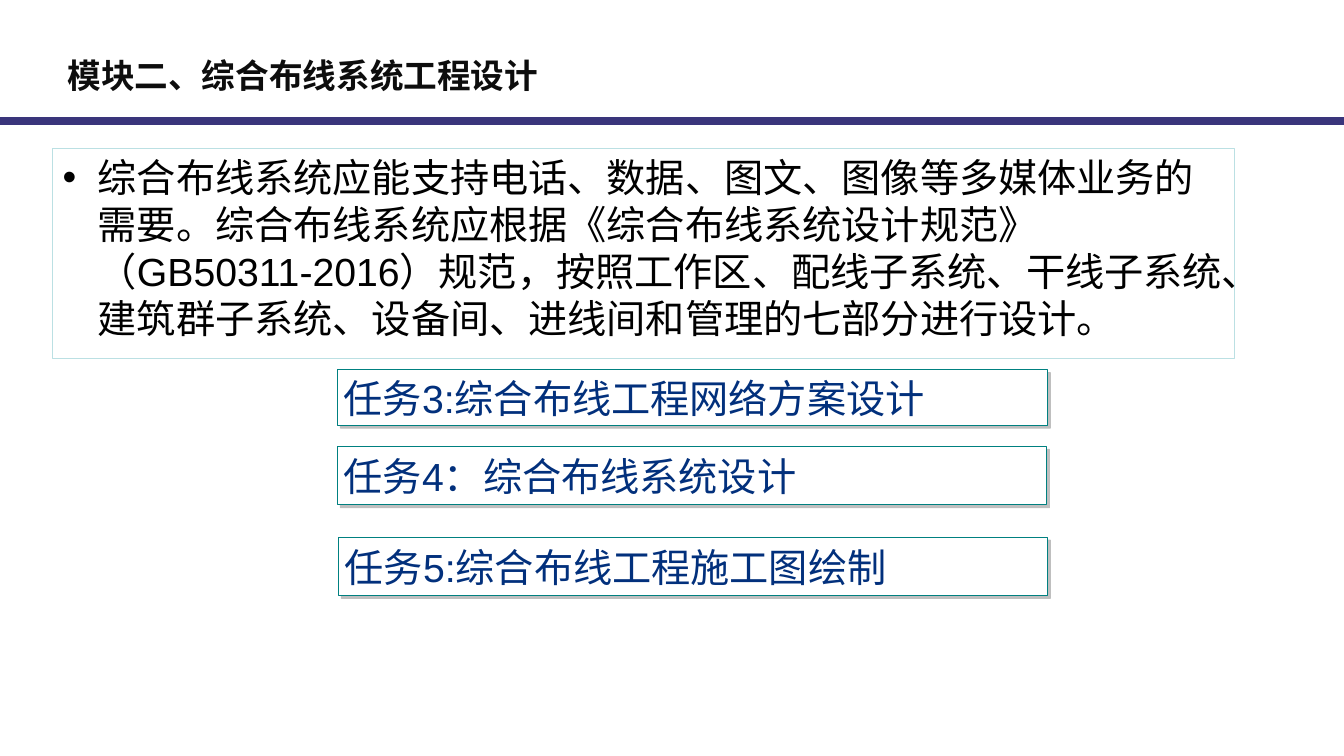
"""Build the slide that introduces module two and its three design tasks."""
from dataclasses import dataclass
from typing import Any

from lxml import etree
from pptx import Presentation
from pptx import util as u
from pptx.dml.color import RGBColor
from pptx.enum import shapes, text
from pptx.oxml import ns


@dataclass(frozen=True)
class Theme:
    """Colours, font and type sizes of the slide."""
    face: str = "Arial"
    head: int = 24
    body: int = 28
    dark: str = "0D0D0D"
    ink: str = "000000"
    navy: str = "02307C"
    rule: str = "3A357B"
    pale: str = "BBE0E3"
    teal: str = "008080"
    white: str = "FFFFFF"
    shade: str = "808080"


@dataclass(frozen=True)
class Box:
    """Place of one box in inches, with its words."""
    left: float
    top: float
    width: float
    height: float
    words: str


THEME = Theme()
TITLE = Box(0.57, 0.43, 10.08, 0.62, "模块二、综合布线系统工程设计")
BODY = Box(
    0.52, 1.47, 11.72, 2.09,
    "综合布线系统应能支持电话、数据、图文、图像等多媒体业务的需要。"
    "综合布线系统应根据《综合布线系统设计规范》（GB50311-2016）规范，"
    "按照工作区、配线子系统、干线子系统、建筑群子系统、设备间、"
    "进线间和管理的七部分进行设计。",
)
TASKS = (
    Box(3.35, 3.67, 7.04, 0.55, "任务3:综合布线工程网络方案设计"),
    Box(3.35, 4.43, 7.03, 0.58, "任务4：综合布线系统设计"),
    Box(3.36, 5.33, 7.03, 0.58, "任务5:综合布线工程施工图绘制"),
)


def apply(item: Any, form: dict[str, Any]) -> None:
    """Set each format value on an item."""
    for name, value in form.items():
        setattr(item, name, value)


def place(shape: Any, box: Box) -> None:
    """Move a shape to its box."""
    apply(shape, {name: u.Inches(getattr(box, name))
                  for name in ("left", "top", "width", "height")})


def write(shape: Any, words: str, size: int, tint: str, bold: bool = False,
          mid: bool = True, bullet: bool = False) -> None:
    """Put one formatted paragraph into a shape."""
    frame = shape.text_frame
    anchor = text.MSO_ANCHOR.MIDDLE if mid else text.MSO_ANCHOR.TOP
    apply(frame, {"word_wrap": True, "auto_size": text.MSO_AUTO_SIZE.NONE,
                  "vertical_anchor": anchor})
    para = frame.paragraphs[0]
    run = para.add_run()
    run.text = words
    if bullet:
        props = para._p.get_or_add_pPr()
        props.set("marL", str(u.Inches(0.35)))
        props.set("indent", str(u.Inches(-0.35)))
        etree.SubElement(props, ns.qn("a:buChar"), char="•")
    apply(para, {"alignment": text.PP_ALIGN.LEFT, "space_before": u.Pt(0)})
    apply(run.font, {"name": THEME.face, "size": u.Pt(size), "bold": bold})
    run.font.color.rgb = RGBColor.from_string(tint)


def edge(line: Any, tint: str, width: float) -> None:
    """Colour a line and set its width."""
    line.color.rgb = RGBColor.from_string(tint)
    line.width = u.Pt(width)


def shade(shape: Any) -> None:
    """Give a shape a hard shadow to the lower right."""
    shape.shadow.inherit = False
    effects = shape._element.spPr.find(ns.qn("a:effectLst"))
    outer = etree.SubElement(effects, ns.qn("a:outerShdw"), blurRad="0",
                             dist=str(u.Pt(2.8)), dir="2700000",
                             algn="ctr", rotWithShape="0")
    tint = etree.SubElement(outer, ns.qn("a:srgbClr"), val=THEME.shade)
    etree.SubElement(tint, ns.qn("a:alpha"), val="50000")


def task(slide: Any, box: Box) -> None:
    """Draw one task box."""
    shape = slide.shapes.add_shape(shapes.MSO_SHAPE.RECTANGLE, 0, 0, 0, 0)
    place(shape, box)
    shape.fill.solid()
    shape.fill.fore_color.rgb = RGBColor.from_string(THEME.white)
    edge(shape.line, THEME.teal, 0.75)
    shade(shape)
    side, rim = u.Inches(0.06), u.Inches(0.01)
    apply(shape.text_frame, {"margin_left": side, "margin_right": side,
                             "margin_top": rim, "margin_bottom": rim})
    write(shape, box.words, THEME.body, THEME.navy)


def main() -> None:
    """Build and save the slide."""
    deck = Presentation()
    apply(deck, {"slide_width": u.Inches(13.33),
                 "slide_height": u.Inches(7.5)})
    slide = deck.slides.add_slide(deck.slide_layouts[1])

    level = u.Inches(1.2)
    rule = slide.shapes.add_connector(shapes.MSO_CONNECTOR.STRAIGHT,
                                      deck.slide_width, level, 0, level)
    edge(rule.line, THEME.rule, 5.75)
    etree.SubElement(rule._element.spPr, ns.qn("a:effectLst"))

    title = slide.shapes.title
    place(title, TITLE)
    write(title, TITLE.words, THEME.head, THEME.dark, bold=True)

    body = slide.placeholders[1]
    place(body, BODY)
    edge(body.line, THEME.pale, 0.75)
    write(body, BODY.words, THEME.body, THEME.ink, mid=False, bullet=True)

    for box in TASKS:
        task(slide, box)
    deck.save("out.pptx")


if __name__ == "__main__":
    main()
